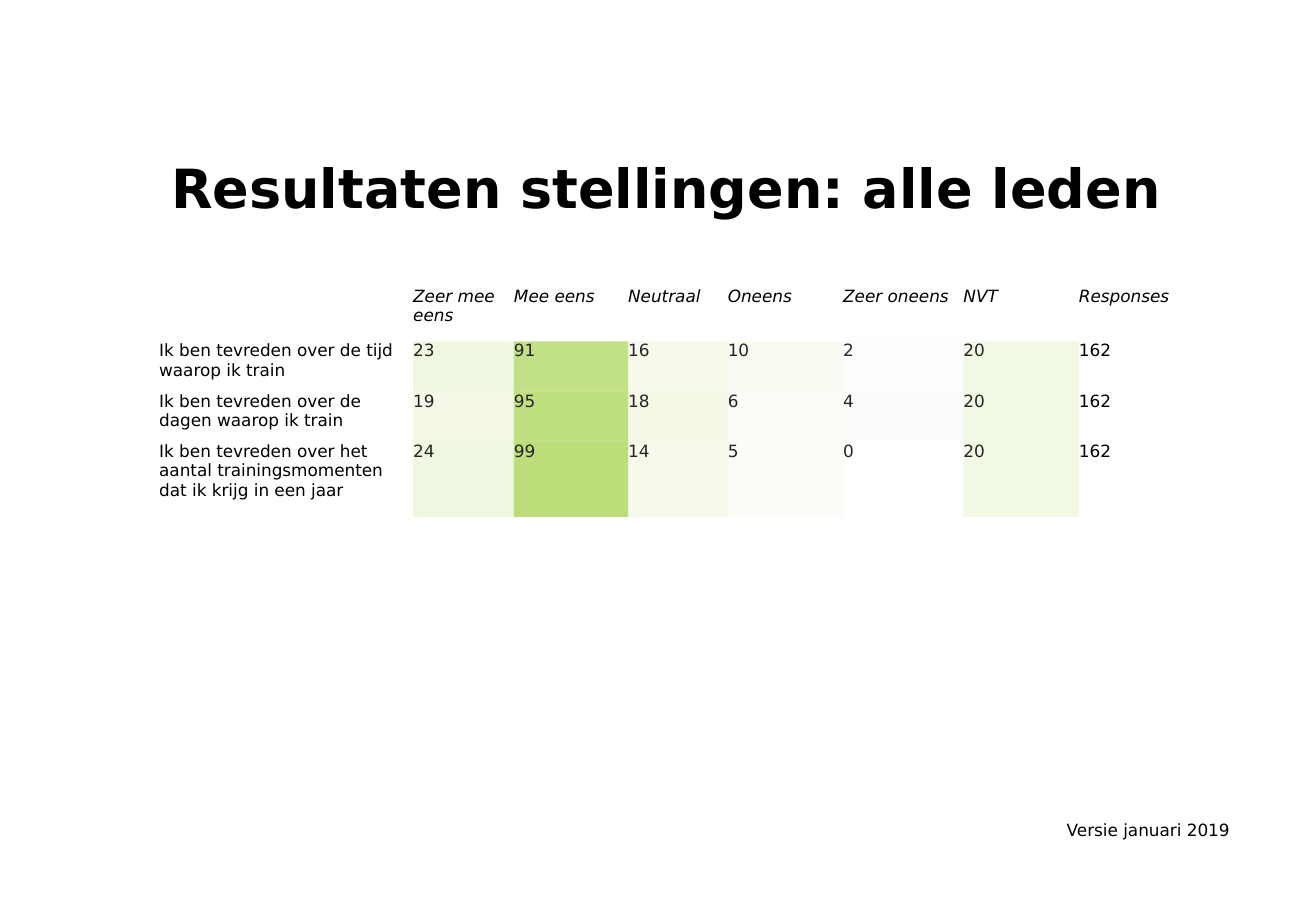
from lxml.etree import SubElement
from pptx import Presentation
from pptx.dml.color import RGBColor
from pptx.enum.text import MSO_ANCHOR as Anchor
from pptx.oxml.ns import qn
from pptx.util import Inches, Pt

FONT, BLACK, GREY, GREEN = "DejaVu Sans", "000000", "252525", "94C826"
NO_STYLE = "{2D5ABB26-0587-4C30-8999-92F81FD0307C}"
LEFT = 12.1

HEADS = ["", "Zeer mee eens", "Mee eens", "Neutraal", "Oneens",
         "Zeer oneens", "NVT", "Responses"]
VOTES = [
    ("Ik ben tevreden over de tijd waarop ik train",
     [23, 91, 16, 10, 2, 20]),
    ("Ik ben tevreden over de dagen waarop ik train",
     [19, 95, 18, 6, 4, 20]),
    ("Ik ben tevreden over het aantal trainingsmomenten dat ik krijg in een jaar",
     [24, 99, 14, 5, 0, 20]),
]
WIDTHS = [19.3, 7.66, 8.68, 7.57, 8.77, 9.14, 8.77, 11.08]
HEIGHTS = [6, 5.5, 5.5, 8.27]


def color(code):
    return RGBColor.from_string(code)


class Page:
    """Holds the slide; all lengths are percentages of its size."""

    def __init__(self, deck):
        self.deck = deck
        self.slide = deck.slides.add_slide(deck.slide_layouts[6])

    def wide(self, share):
        return round(self.deck.slide_width * share / 100)

    def high(self, share):
        return round(self.deck.slide_height * share / 100)

    def area(self, x, y, w, h):
        return self.wide(x), self.high(y), self.wide(w), self.high(h)

    def letter(self, frame, text, size=10, code=BLACK, bold=False, italic=False):
        """Put styled text into a text frame."""
        frame.text = text
        frame.word_wrap = True
        for run in frame.paragraphs[0].runs:
            font = run.font
            font.name, font.size = FONT, Pt(size)
            font.bold, font.italic = bold, italic
            font.color.rgb = color(code)

    def label(self, text, area, anchor=Anchor.TOP, space=1.0, **style):
        frame = self.slide.shapes.add_textbox(*self.area(*area)).text_frame
        self.letter(frame, text, **style)
        frame.vertical_anchor = anchor
        frame.paragraphs[0].line_spacing = space

    def cell(self, cell, text, tint=0, **style):
        """Fill one table cell; tint is the opacity of the green in percent."""
        cell.margin_left = cell.margin_right = 0
        cell.margin_top = cell.margin_bottom = 0
        self.letter(cell.text_frame, text, **style)
        if not tint:
            cell.fill.background()
            return
        cell.fill.solid()
        cell.fill.fore_color.rgb = color(GREEN)
        tone = cell._tc.tcPr.find(qn("a:solidFill")).find(qn("a:srgbClr"))
        SubElement(tone, qn("a:alpha"), val=str(tint * 1000))

    def table(self, x, y):
        area = self.area(x, y, sum(WIDTHS), sum(HEIGHTS))
        frame = self.slide.shapes.add_table(len(HEIGHTS), len(WIDTHS), *area)
        next(frame.element.iter(qn("a:tableStyleId"))).text = NO_STYLE
        grid = frame.table
        for col, share in zip(grid.columns, WIDTHS):
            col.width = self.wide(share)
        for row, share in zip(grid.rows, HEIGHTS):
            row.height = self.high(share)
        for i, head in enumerate(HEADS):
            self.cell(grid.cell(0, i), head, italic=True)
        for r, (claim, votes) in enumerate(VOTES, 1):
            total = sum(votes)
            self.cell(grid.cell(r, 0), claim)
            for c, vote in enumerate(votes, 1):
                self.cell(grid.cell(r, c), str(vote),
                          tint=100 * vote // total, code=GREY)
            self.cell(grid.cell(r, len(votes) + 1), str(total))


def main():
    deck = Presentation()
    deck.slide_width, deck.slide_height = Inches(10.83), Inches(7.5)
    page = Page(deck)
    page.label("Resultaten stellingen: alle leden", (LEFT, 15.33, 78.76, 11.33),
               anchor=Anchor.MIDDLE, space=0.9, size=32, bold=True)
    page.label("Versie januari 2019", (80.15, 89.33, 20.13, 3.6))
    page.table(LEFT, 31.47)
    deck.save("out.pptx")


if __name__ == "__main__":
    main()
